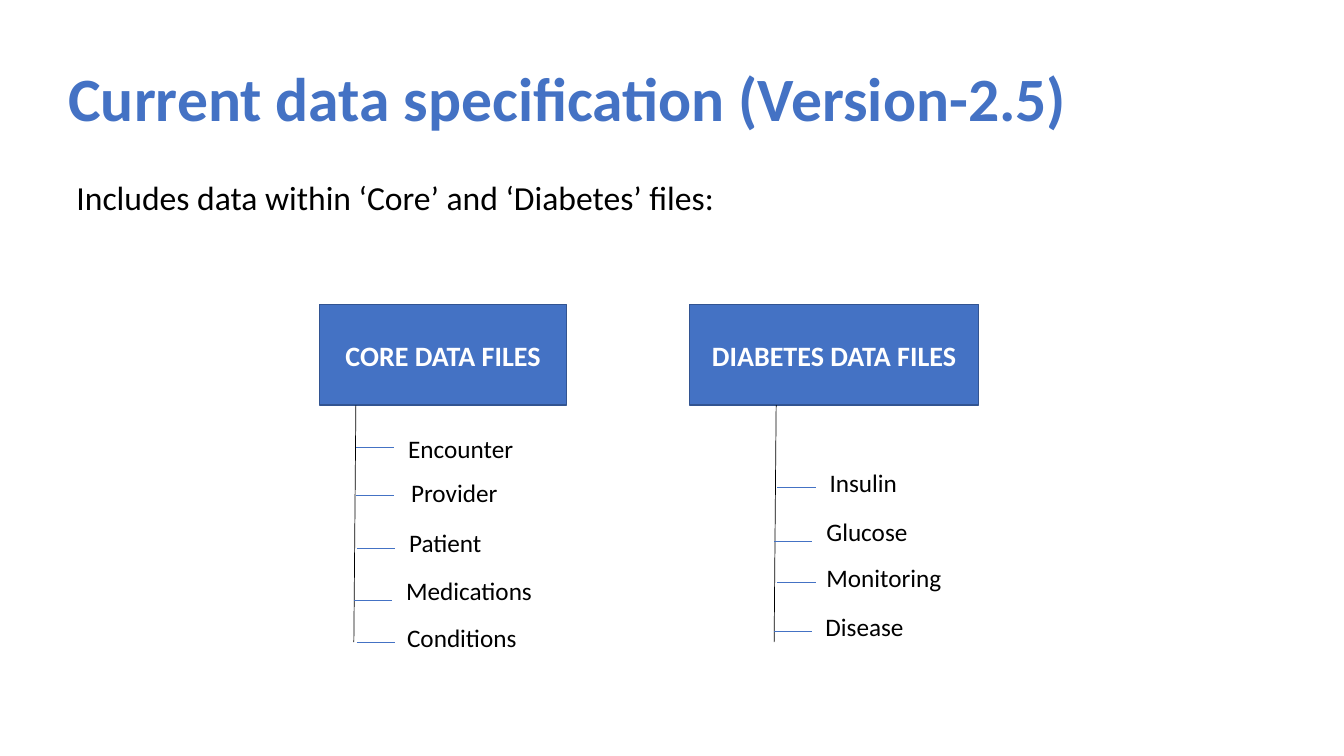
from lxml import etree
from pptx import Presentation
from pptx.dml.color import RGBColor
from pptx.enum.shapes import MSO_CONNECTOR, MSO_SHAPE
from pptx.enum.text import MSO_ANCHOR, MSO_AUTO_SIZE, PP_ALIGN
from pptx.oxml.ns import qn
from pptx.util import Inches, Pt

STRAIGHT = MSO_CONNECTOR.STRAIGHT
RECT = MSO_SHAPE.RECTANGLE
TOP, MIDDLE = MSO_ANCHOR.TOP, MSO_ANCHOR.MIDDLE
FIT, FIXED = MSO_AUTO_SIZE.SHAPE_TO_FIT_TEXT, MSO_AUTO_SIZE.NONE
LEFT, CENTER = PP_ALIGN.LEFT, PP_ALIGN.CENTER

COLORS = {"blue": "4472C4", "edge": "325491", "black": "000000", "white": "FFFFFF"}
BOX_TOP, BOX_HIGH = 40.27, 13.33
STEM_TOP, STEM_END = BOX_TOP + BOX_HIGH, 84.93
LEAN, TICK, LABEL_HIGH = 0.15, 2.85, 5.33

GROUPS = [
    ("CORE DATA FILES", 23.78, 18.38, 26.48, [
        ("Encounter", 29.63, 56.67, 9.45, 26.48, 59.2),
        ("Provider", 29.85, 62.53, 8.03, 26.48, 65.47),
        ("Patient", 29.7, 69.07, 6.98, 26.55, 72.53),
        ("Medications", 29.48, 75.47, 11.03, 26.33, 79.47),
        ("Conditions", 29.55, 81.6, 9.75, 26.55, 84.93),
    ]),
    ("DIABETES DATA FILES", 51.3, 21.53, 57.75, [
        ("Insulin", 60.98, 61.2, 6.6, 57.83, 64.53),
        ("Glucose", 60.75, 67.6, 7.65, 57.6, 71.6),
        ("Monitoring", 60.75, 73.73, 10.13, 57.83, 77.07),
        ("Disease", 60.68, 80.27, 7.43, 57.6, 83.47),
    ]),
]


class Deck:
    font = "Calibri"

    def __init__(self):
        self.prs = Presentation()
        self.prs.slide_width = Inches(13.33)
        self.prs.slide_height = Inches(7.5)
        self.slide = self.prs.slides.add_slide(self.prs.slide_layouts[6])

    def color(self, name):
        return RGBColor.from_string(COLORS[name])

    def across(self, share):
        return round(self.prs.slide_width * share / 100)

    def down(self, share):
        return round(self.prs.slide_height * share / 100)

    def place(self, x, y, w, h):
        return self.across(x), self.down(y), self.across(w), self.down(h)

    def style(self, shape, text, size, color, bold=False, align=LEFT, anchor=TOP, space=None):
        frame = shape.text_frame
        frame.text = text
        frame.word_wrap = True
        frame.vertical_anchor = anchor
        para = frame.paragraphs[0]
        para.alignment = align
        para.line_spacing = space
        font = para.runs[0].font
        font.name, font.size, font.bold = self.font, Pt(size), bold
        font.color.rgb = self.color(color)

    def text(self, area, text, size, color="black", **looks):
        shape = self.slide.shapes.add_textbox(*self.place(*area))
        self.style(shape, text, size, color, **looks)
        shape.text_frame.auto_size = FIXED

    def label(self, area, text):
        shape = self.slide.shapes.add_textbox(*self.place(*area))
        self.style(shape, text, 18, "black")
        shape.text_frame.word_wrap = False
        shape.text_frame.auto_size = FIT

    def box(self, area, text):
        shape = self.slide.shapes.add_shape(RECT, *self.place(*area))
        shape.shadow.inherit = False
        shape.fill.solid()
        shape.fill.fore_color.rgb = self.color("blue")
        shape.line.color.rgb = self.color("edge")
        shape.line.width = Pt(1)
        self.style(shape, text, 20, "white", bold=True, align=CENTER, anchor=MIDDLE)

    def line(self, x1, y1, x2, y2, color):
        line = self.slide.shapes.add_connector(
            STRAIGHT, self.across(x1), self.down(y1), self.across(x2), self.down(y2))
        line.line.color.rgb = self.color(color)
        line.line.width = Pt(0.5)
        etree.SubElement(line._element.spPr, qn("a:effectLst"))

    def group(self, head, left, wide, stem, items):
        self.box((left, BOX_TOP, wide, BOX_HIGH), head)
        self.line(stem, STEM_TOP, stem - LEAN, STEM_END, "black")
        for name, x, y, w, start, level in items:
            self.line(start, level, start + TICK, level, "blue")
            self.label((x, y, w, LABEL_HIGH), name)


def main():
    deck = Deck()
    deck.text((4.35, 7.47, 86.25, 11.87), "Current data specification (Version-2.5)",
              44, "blue", bold=True, anchor=MIDDLE, space=0.9)
    deck.text((4.95, 23.33, 89.93, 66.8), "Includes data within ‘Core’ and ‘Diabetes’ files:",
              24, space=0.9)
    for group in GROUPS:
        deck.group(*group)
    deck.prs.save("out.pptx")


if __name__ == "__main__":
    main()
